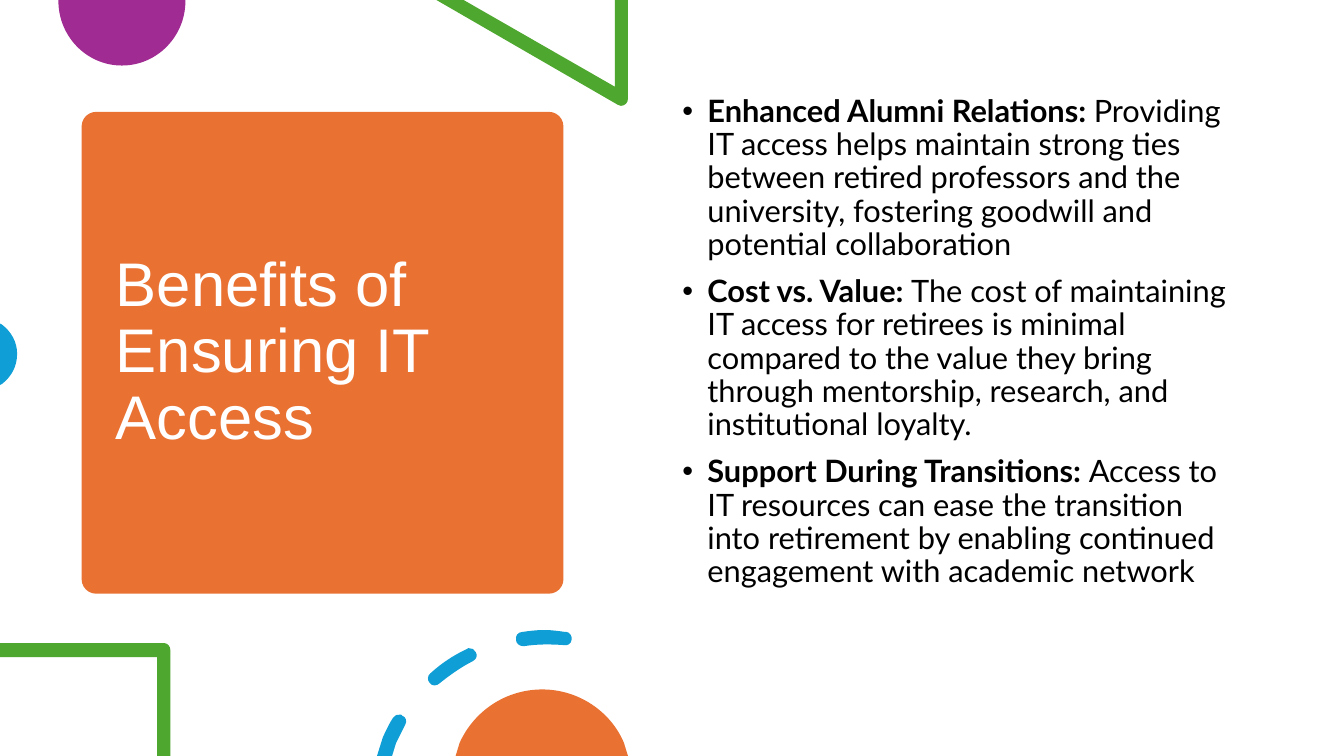
from pptx import Presentation
from pptx.dml.color import RGBColor
from pptx.enum.shapes import MSO_SHAPE
from pptx.enum.text import MSO_ANCHOR
from pptx.util import Inches, Pt
from lxml.etree import SubElement
from pptx.oxml.ns import qn

COLORS = {
    "orange": "E97132", "purple": "A02B93", "green": "4EA72E",
    "blue": "0F9ED5", "white": "FFFFFF", "black": "000000",
}
UNITS = 1000  # freeform units per inch

# Outlines in inches: a pair is a line to a point, six numbers are a Bezier curve
PURPLE_DISC = [[(1.84, 0), (0.58, 0), (0.58, 0.01),
                (0.58, 0.36, 0.86, 0.65, 1.21, 0.65),
                (1.56, 0.65, 1.84, 0.36, 1.84, 0.01)]]
GREEN_TRIANGLE = [[(6.23, 0), (6.1, 0), (6.1, 0.86), (4.6, 0), (4.33, 0), (6.13, 1.04),
                   (6.14, 1.05, 6.15, 1.05, 6.16, 1.05),
                   (6.2, 1.05, 6.23, 1.02, 6.23, 0.98)]]
BLUE_DISC = [[(0, 3.21), (0, 3.82), (0.02, 3.81),
              (0.11, 3.74, 0.17, 3.64, 0.17, 3.51),
              (0.17, 3.39, 0.11, 3.29, 0.02, 3.22)]]
GREEN_CORNER = [[(1.63, 6.38), (0, 6.38), (0, 6.52), (1.56, 6.52), (1.56, 7.5),
                 (1.69, 7.5), (1.69, 6.45), (1.69, 6.41, 1.66, 6.38, 1.63, 6.38)]]
BLUE_DASHES = [
    [(3.97, 7.09), (3.94, 7.08, 3.92, 7.1, 3.9, 7.12),
     (3.86, 7.18, 3.83, 7.25, 3.8, 7.31), (3.74, 7.5), (3.89, 7.5), (3.93, 7.37),
     (3.96, 7.31, 3.99, 7.25, 4.02, 7.19), (4.04, 7.16, 4.03, 7.11, 3.99, 7.1),
     (3.99, 7.09, 3.98, 7.09, 3.97, 7.09)],
    [(4.65, 6.43), (4.65, 6.43, 4.64, 6.43, 4.63, 6.44),
     (4.5, 6.5, 4.38, 6.58, 4.27, 6.68),
     (4.24, 6.7, 4.24, 6.75, 4.26, 6.77), (4.27, 6.79, 4.29, 6.8, 4.31, 6.8),
     (4.33, 6.8, 4.35, 6.79, 4.36, 6.78), (4.46, 6.7, 4.57, 6.62, 4.69, 6.56),
     (4.73, 6.54, 4.74, 6.5, 4.72, 6.47), (4.71, 6.44, 4.68, 6.43, 4.65, 6.43)],
    [(5.4, 6.25), (5.32, 6.25, 5.25, 6.26, 5.18, 6.27),
     (5.14, 6.27, 5.11, 6.31, 5.12, 6.35), (5.12, 6.38, 5.15, 6.41, 5.19, 6.41),
     (5.19, 6.41, 5.19, 6.41, 5.2, 6.41), (5.33, 6.39, 5.46, 6.39, 5.6, 6.4),
     (5.63, 6.41, 5.67, 6.38, 5.67, 6.35), (5.68, 6.31, 5.65, 6.27, 5.62, 6.27),
     (5.62, 6.27, 5.61, 6.27, 5.61, 6.27), (5.54, 6.26, 5.47, 6.25, 5.4, 6.25)],
]
ORANGE_DISC = [[(5.38, 6.84), (5.01, 6.84, 4.7, 7.06, 4.56, 7.37), (4.52, 7.5),
                (6.23, 7.5), (6.19, 7.37), (6.06, 7.06, 5.74, 6.84, 5.38, 6.84)]]

BENEFITS = [
    ("Enhanced Alumni Relations: ",
     "Providing IT access helps maintain strong ties between retired professors "
     "and the university, fostering goodwill and potential collaboration"),
    ("Cost vs. Value: ",
     "The cost of maintaining IT access for retirees is minimal compared to the "
     "value they bring through mentorship, research, and institutional loyalty."),
    ("Support During Transitions: ",
     "Access to IT resources can ease the transition into retirement by enabling "
     "continued engagement with academic network"),
]


def rgb(name):
    return RGBColor.from_string(COLORS[name])


def paint(sp, color):
    sp.shadow.inherit = False
    sp.fill.solid()
    sp.fill.fore_color.rgb = rgb(color)
    sp.line.fill.background()


def curve_segments(sp, contours):
    """Give the curved steps of an outline their Bezier control points."""
    ends = [step[-2:] for contour in contours for step in contour]
    left, top = min(x for x, y in ends), min(y for x, y in ends)
    steps = [step for contour in contours for step in contour[1:]]
    segments = list(sp._element.iter(qn("a:lnTo")))
    for segment, step in zip(segments, steps):
        if len(step) == 2:
            continue
        segment.tag = qn("a:cubicBezTo")
        segment.remove(segment[0])
        for x, y in zip(step[::2], step[1::2]):
            pt = SubElement(segment, qn("a:pt"))
            pt.set("x", str(round((x - left) * UNITS)))
            pt.set("y", str(round((y - top) * UNITS)))


def add_outline(s, contours, color):
    builder = s.shapes.build_freeform(*[v * UNITS for v in contours[0][0]],
                                      scale=Inches(1) / UNITS)
    for i, contour in enumerate(contours):
        points = [(step[-2] * UNITS, step[-1] * UNITS) for step in contour]
        if i:
            builder.move_to(*points[0])
        builder.add_line_segments(points[1:], close=True)
    sp = builder.convert_to_shape()
    curve_segments(sp, contours)
    paint(sp, color)


def add_text_box(s, left, top, width, height, anchor):
    sp = s.shapes.add_textbox(Inches(left), Inches(top), Inches(width), Inches(height))
    tf = sp.text_frame
    tf.word_wrap = True
    tf.vertical_anchor = anchor
    return tf


def style_run(r, font, size, color, bold=False):
    r.font.name = font
    r.font.size = Pt(size)
    r.font.bold = bold
    r.font.color.rgb = rgb(color)


def add_title(s, text):
    tf = add_text_box(s, 1.05, 1.22, 4.31, 4.56, MSO_ANCHOR.MIDDLE)
    tf.text = text
    p = tf.paragraphs[0]
    p.line_spacing = 0.9
    style_run(p.runs[0], "Arial", 44, "white")


def set_bullet(p):
    pPr = p._p.get_or_add_pPr()
    pPr.set("marL", str(Inches(0.25)))
    pPr.set("indent", str(-Inches(0.25)))
    SubElement(pPr, qn("a:buFont")).set("typeface", "Arial")
    SubElement(pPr, qn("a:buChar")).set("char", "•")


def add_benefits(s, benefits):
    tf = add_text_box(s, 6.67, 0.9, 5.75, 5.35, MSO_ANCHOR.TOP)
    for i, (heading, detail) in enumerate(benefits):
        p = tf.add_paragraph() if i else tf.paragraphs[0]
        p.line_spacing = 0.9
        p.space_before = Pt(10)
        set_bullet(p)
        for text, bold in ((heading, True), (detail, False)):
            r = p.add_run()
            r.text = text
            style_run(r, "Lato", 22, "black", bold)


def main():
    prs = Presentation()
    prs.slide_width, prs.slide_height = Inches(40 / 3), Inches(7.5)
    s = prs.slides.add_slide(prs.slide_layouts[6])

    # Title card
    card = s.shapes.add_shape(MSO_SHAPE.ROUNDED_RECTANGLE, Inches(0.81), Inches(1.11),
                              Inches(4.78), Inches(4.78))
    card.adjustments[0] = 0.03
    paint(card, "orange")
    add_title(s, "Benefits of Ensuring IT Access")

    # Decorations above and beside the card
    add_outline(s, PURPLE_DISC, "purple")
    add_outline(s, GREEN_TRIANGLE, "green")
    add_outline(s, BLUE_DISC, "blue")

    # Bulleted benefits
    add_benefits(s, BENEFITS)

    # Decorations below the card
    add_outline(s, GREEN_CORNER, "green")
    add_outline(s, BLUE_DASHES, "blue")
    add_outline(s, ORANGE_DISC, "orange")

    prs.save("out.pptx")


if __name__ == "__main__":
    main()
